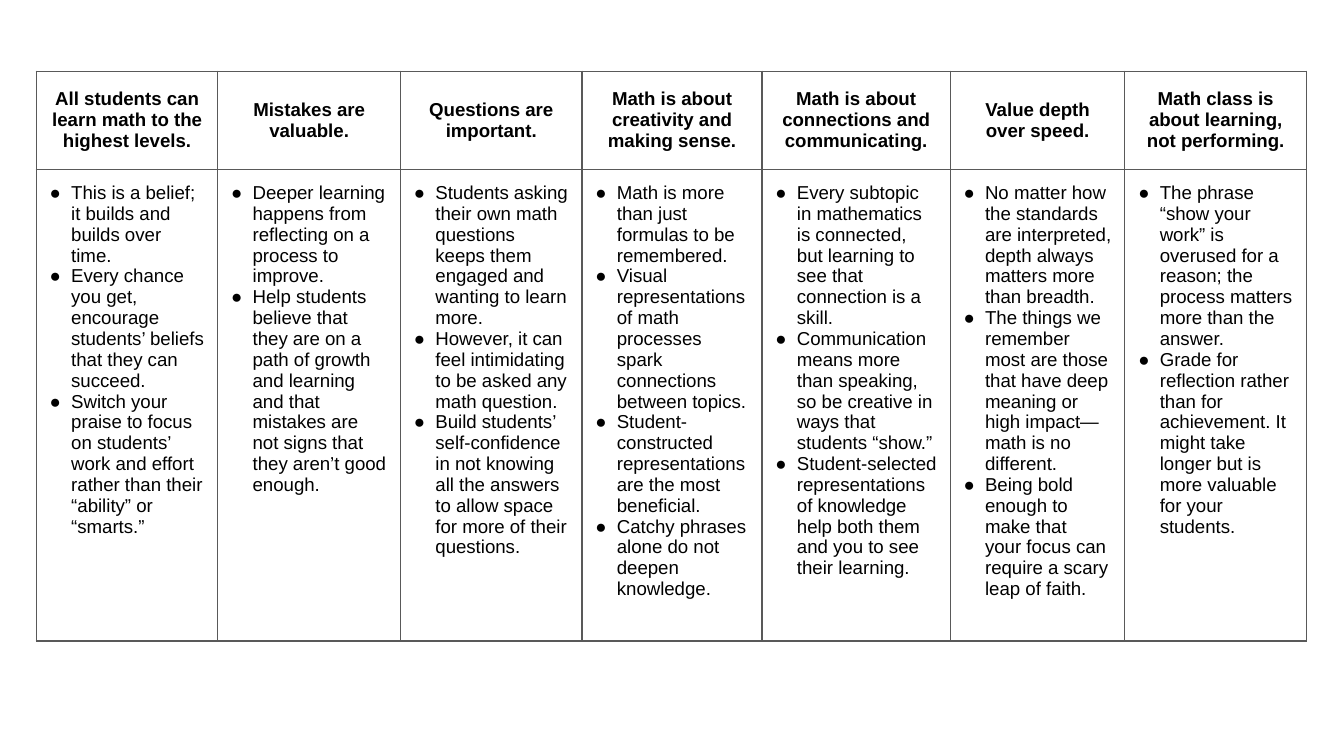
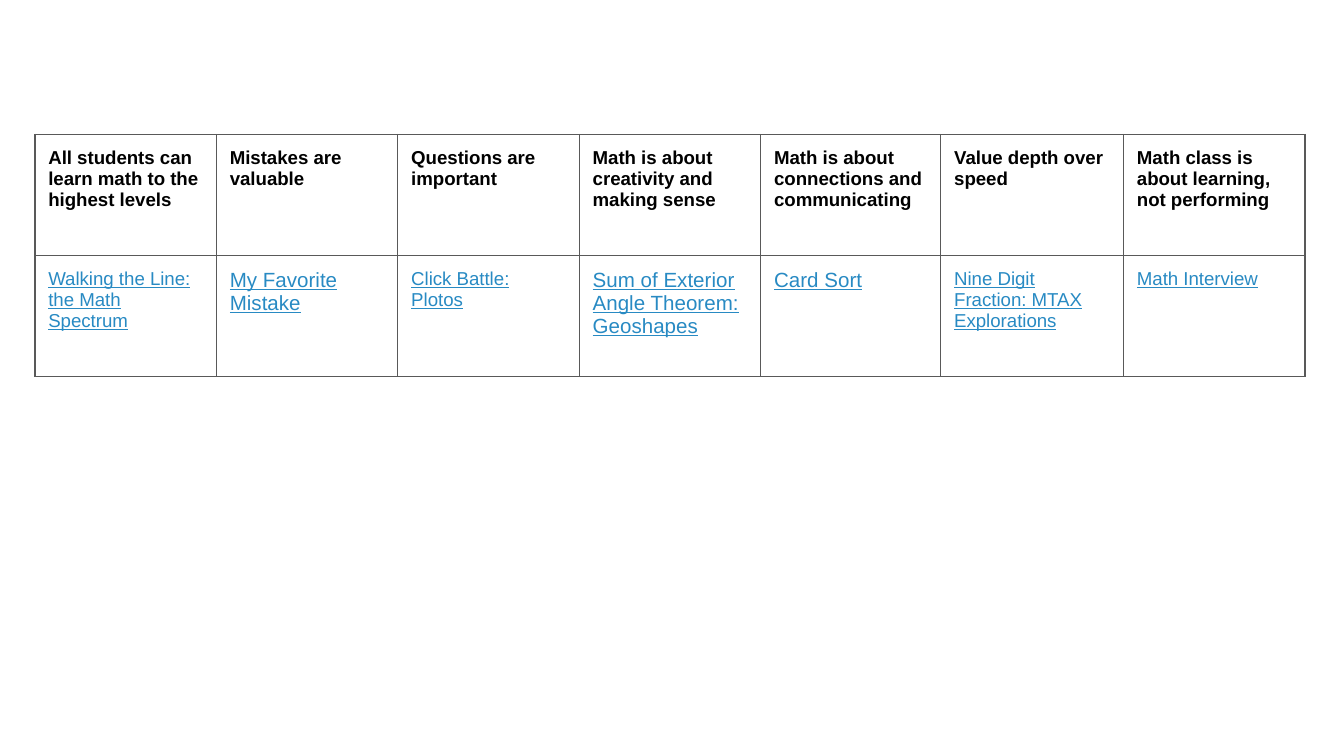
import pptx
import pptx.dml.color
import pptx.enum.text
import pptx.oxml.ns
import pptx.util
from lxml import etree

Inches = pptx.util.Inches
Pt = pptx.util.Pt
ALIGN = pptx.enum.text.PP_ALIGN
ANCHOR = pptx.enum.text.MSO_ANCHOR

BLACK = pptx.dml.color.RGBColor(0x00, 0x00, 0x00)
WHITE = pptx.dml.color.RGBColor(0xFF, 0xFF, 0xFF)
BORDER = pptx.dml.color.RGBColor(0x59, 0x59, 0x59)
LINK_BLUE = pptx.dml.color.RGBColor(0x28, 0x8A, 0xC3)
FONT = "Arial"
CELL_MARGIN = 0.1
BULLET_INDENT = 0.16

# Each principle: heading, explanatory points, activity, activity text size
PRINCIPLES = [
    ("All students can learn math to the highest levels",
     ["This is a belief; it builds and builds over time.",
      "Every chance you get, encourage students’ beliefs that they can succeed.",
      "Switch your praise to focus on students’ work and effort rather than "
      "their “ability” or “smarts.”"],
     "Walking the Line: the Math Spectrum", 10),
    ("Mistakes are valuable",
     ["Deeper learning happens from reflecting on a process to improve.",
      "Help students believe that they are on a path of growth and learning and "
      "that mistakes are not signs that they aren’t good enough."],
     "My Favorite Mistake", 11),
    ("Questions are important",
     ["Students asking their own math questions keeps them engaged and wanting "
      "to learn more.",
      "However, it can feel intimidating to be asked any math question.",
      "Build students’ self-confidence in not knowing all the answers to allow "
      "space for more of their questions."],
     "Click Battle: Plotos", 10),
    ("Math is about creativity and making sense",
     ["Math is more than just formulas to be remembered.",
      "Visual representations of math processes spark connections between topics.",
      "Student-\nconstructed representations are the most beneficial.",
      "Catchy phrases alone do not deepen knowledge."],
     "Sum of Exterior Angle Theorem: Geoshapes", 11),
    ("Math is about connections and communicating",
     ["Every subtopic in mathematics is connected, but learning to see that "
      "connection is a skill.",
      "Communication means more than speaking, so be creative in ways that "
      "students “show.”",
      "Student-selected representations of knowledge help both them and you to "
      "see their learning."],
     "Card Sort", 11),
    ("Value depth over speed",
     ["No matter how the standards are interpreted, depth always matters more "
      "than breadth.",
      "The things we remember most are those that have deep meaning or high "
      "impact—math is no different.",
      "Being bold enough to make that\nyour focus can require a scary leap of "
      "faith."],
     "Nine Digit Fraction: MTAX Explorations", 10),
    ("Math class is about learning, not performing",
     ["The phrase “show your work” is overused for a reason; the process matters "
      "more than the answer.",
      "Grade for reflection rather than for achievement. It might take longer "
      "but is more valuable for your students."],
     "Math Interview", 10),
]


def add_element(parent, tag, **attributes):
    return etree.SubElement(parent, pptx.oxml.ns.qn(tag), attributes)


def draw_borders(cell):
    properties = cell._tc.get_or_add_tcPr()
    for position, tag in enumerate(("a:lnL", "a:lnR", "a:lnT", "a:lnB")):
        line = add_element(properties, tag, w=str(Pt(0.75)))
        fill = add_element(line, "a:solidFill")
        add_element(fill, "a:srgbClr", val=str(BORDER))
        properties.insert(position, line)


def add_bullet(paragraph):
    properties = paragraph._p.get_or_add_pPr()
    properties.set("marL", str(Inches(BULLET_INDENT)))
    properties.set("indent", str(-Inches(BULLET_INDENT)))
    color = add_element(properties, "a:buClr")
    add_element(color, "a:srgbClr", val=str(BLACK))
    add_element(properties, "a:buFont", typeface=FONT)
    add_element(properties, "a:buChar", char="●")


def write_cell(cell, texts, size=10, color=BLACK, bold=False, underline=False,
               bullet=False, align=ALIGN.LEFT, anchor=ANCHOR.TOP):
    cell.vertical_anchor = anchor
    for index, text in enumerate(texts):
        frame = cell.text_frame
        paragraph = frame.paragraphs[0] if index == 0 else frame.add_paragraph()
        paragraph.alignment = align
        if bullet:
            add_bullet(paragraph)
        for number, part in enumerate(text.split("\n")):
            if number:
                paragraph.add_line_break()
            run = paragraph.add_run()
            run.text = part
            run.font.name = FONT
            run.font.size = Pt(size)
            run.font.color.rgb = color
            run.font.bold = bold
            run.font.underline = underline


def add_grid(slide, left, top, column_widths, row_heights):
    """Add an empty white table with thin grey borders."""
    shape = slide.shapes.add_table(
        len(row_heights), len(column_widths), Inches(left), Inches(top),
        Inches(sum(column_widths)), Inches(sum(row_heights)))
    table = shape.table
    table.first_row = False
    table.horz_banding = False
    for column, width in zip(table.columns, column_widths):
        column.width = Inches(width)
    for row, height in zip(table.rows, row_heights):
        row.height = Inches(height)
    for cell in table.iter_cells():
        cell.margin_left = cell.margin_right = Inches(CELL_MARGIN)
        cell.margin_top = cell.margin_bottom = Inches(CELL_MARGIN)
        cell.fill.solid()
        cell.fill.fore_color.rgb = WHITE
        draw_borders(cell)
    return table


def add_blank_slide(presentation):
    slide = presentation.slides.add_slide(presentation.slide_layouts[6])
    slide.background.fill.solid()
    slide.background.fill.fore_color.rgb = WHITE
    return slide


def build_principles_slide(presentation):
    slide = add_blank_slide(presentation)
    widths = [1.35, 1.36, 1.35, 1.34, 1.4, 1.3, 1.35]
    table = add_grid(slide, 0.27, 0.53, widths, [0.73, 3.51])
    for column, (heading, points, _, _) in enumerate(PRINCIPLES):
        write_cell(table.cell(0, column), [heading + "."], bold=True,
                   align=ALIGN.CENTER, anchor=ANCHOR.MIDDLE)
        write_cell(table.cell(1, column), points, bullet=True)


def build_activities_slide(presentation):
    slide = add_blank_slide(presentation)
    widths = [1.35] * 4 + [1.34, 1.36, 1.35]
    table = add_grid(slide, 0.26, 1, widths, [0.9, 0.9])
    for column, (heading, _, activity, size) in enumerate(PRINCIPLES):
        write_cell(table.cell(0, column), [heading], bold=True)
        write_cell(table.cell(1, column), [activity], size=size,
                   color=LINK_BLUE, underline=True)


def main():
    presentation = pptx.Presentation()
    # Widescreen, 16 to 9
    presentation.slide_width = Inches(10)
    presentation.slide_height = Inches(10 * 9 / 16)
    build_principles_slide(presentation)
    build_activities_slide(presentation)
    presentation.save("out.pptx")


if __name__ == "__main__":
    main()
